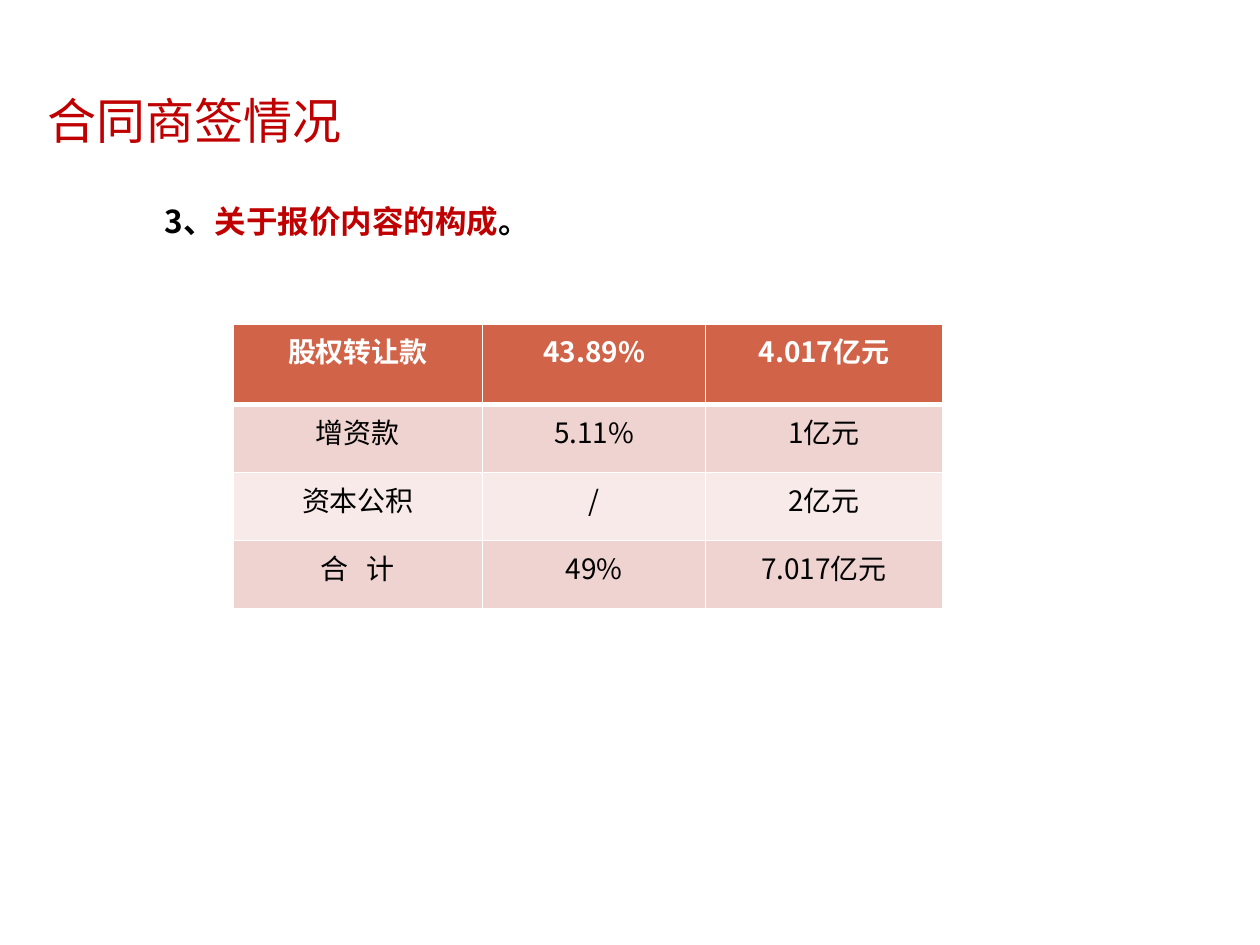
from typing import NamedTuple

from lxml import etree
from pptx import Presentation
from pptx import util as u
from pptx.dml import color
from pptx.enum import text
from pptx.oxml import ns

FONT = "Noto Sans CJK SC"
RED, BLACK, WHITE = "C00000", "000000", "FFFFFF"


class Run(NamedTuple):
    text: str
    color: str = BLACK
    bold: bool = False
    spacing: float = 0


class TableRow(NamedTuple):
    height: float
    fill: str
    cells: tuple[Run, ...]


ROWS = (
    TableRow(0.64, "D16349", tuple(Run(label, WHITE, True) for label in ("股权转让款", "43.89%", "4.017亿元"))),
    TableRow(0.54, "EED3D0", (Run("增资款"), Run("5.11%"), Run("1亿元"))),
    TableRow(0.54, "F7EAE9", (Run("资本公积"), Run("/"), Run("2亿元"))),
    TableRow(0.54, "EED3D0", (Run("合 计", spacing=3.5), Run("49%"), Run("7.017亿元"))),
)
COLUMN_WIDTHS = (1.98, 1.77, 1.88)


def rgb(value: str) -> color.RGBColor:
    return color.RGBColor.from_string(value)


def write_text(frame, *runs: Run, size: float, align=text.PP_ALIGN.LEFT, indent: float = 0) -> None:
    paragraph = frame.paragraphs[0]
    paragraph.alignment = align
    if indent:
        paragraph._p.get_or_add_pPr().set("indent", str(u.Inches(indent)))
    for item in runs:
        run = paragraph.add_run()
        run.text = item.text
        run.font.size = u.Pt(size)
        run.font.bold = item.bold
        run.font.color.rgb = rgb(item.color)
        run.font.name = FONT
        properties = run._r.get_or_add_rPr()
        etree.SubElement(properties, ns.qn("a:ea")).set("typeface", FONT)
        if item.spacing:
            properties.set("spc", str(int(item.spacing * 100)))


def add_text(slide, left: float, top: float, width: float, height: float, *runs: Run,
             size: float, indent: float = 0) -> None:
    shape = slide.shapes.add_textbox(*map(u.Inches, (left, top, width, height)))
    shape.text_frame.word_wrap = True
    write_text(shape.text_frame, *runs, size=size, indent=indent)


def set_borders(cell, top: float, bottom: float) -> None:
    properties = cell._tc.get_or_add_tcPr()
    widths = {"lnL": 1, "lnR": 1, "lnT": top, "lnB": bottom}
    for position, (side, width) in enumerate(widths.items()):
        line = etree.Element(ns.qn(f"a:{side}"), w=str(u.Pt(width)))
        fill = etree.SubElement(line, ns.qn("a:solidFill"))
        etree.SubElement(fill, ns.qn("a:srgbClr"), val=WHITE)
        properties.insert(position, line)


def add_price_table(slide, left: float, top: float) -> None:
    height = sum(row.height for row in ROWS)
    shape = slide.shapes.add_table(
        len(ROWS), len(COLUMN_WIDTHS),
        u.Inches(left), u.Inches(top), u.Inches(sum(COLUMN_WIDTHS)), u.Inches(height))
    table = shape.table
    table.horz_banding = False
    for column, width in zip(table.columns, COLUMN_WIDTHS):
        column.width = u.Inches(width)
    for row_index, row in enumerate(ROWS):
        table.rows[row_index].height = u.Inches(row.height)
        for column_index, run in enumerate(row.cells):
            cell = table.cell(row_index, column_index)
            cell.fill.solid()
            cell.fill.fore_color.rgb = rgb(row.fill)
            set_borders(cell, top=3 if row_index == 1 else 1, bottom=3 if row_index == 0 else 1)
            write_text(cell.text_frame, run, size=16, align=text.PP_ALIGN.CENTER)


def main() -> None:
    presentation = Presentation()
    presentation.slide_width, presentation.slide_height = u.Inches(10), u.Inches(7.5)
    slide = presentation.slides.add_slide(presentation.slide_layouts[6])
    add_text(slide, 0.28, 0.67, 3.07, 0.57, Run("合同商签情况", RED), size=28)
    add_text(slide, 0.83, 1.55, 8.54, 3.42,
             Run("3、", bold=True), Run("关于报价内容的构成", RED, True), Run("。", bold=True),
             size=18, indent=0.38)
    add_price_table(slide, 1.85, 2.57)
    presentation.save("out.pptx")


if __name__ == "__main__":
    main()
